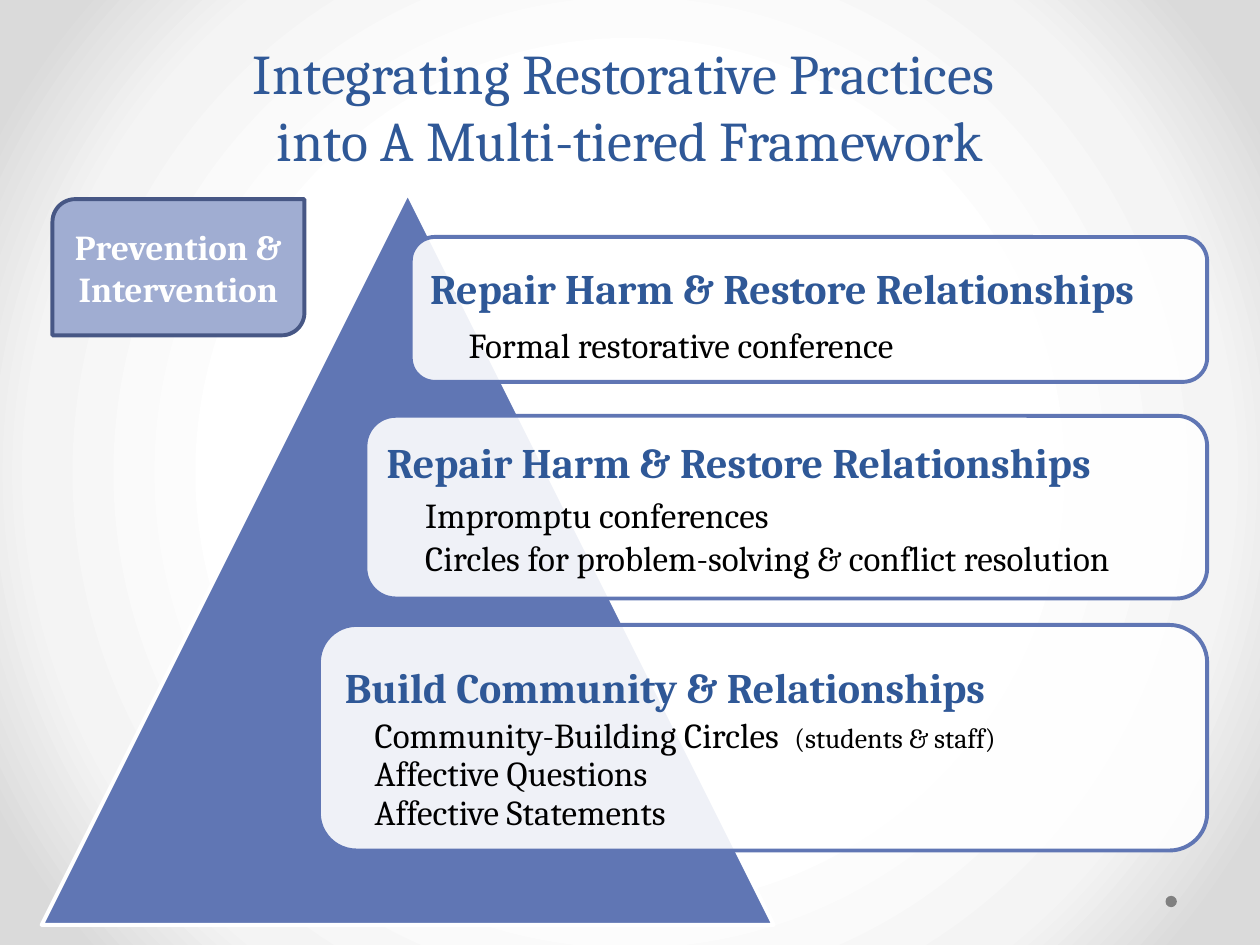
from dataclasses import dataclass

from lxml import etree
from pptx import Presentation
from pptx.dml.color import RGBColor
from pptx.enum.shapes import MSO_SHAPE
from pptx.enum.text import MSO_ANCHOR, MSO_AUTO_SIZE, PP_ALIGN
from pptx.oxml import parse_xml
from pptx.oxml.ns import nsdecls, qn
from pptx.util import Pt

TRIANGLE = MSO_SHAPE.ISOSCELES_TRIANGLE
ROUNDED = MSO_SHAPE.ROUNDED_RECTANGLE
DIAGONAL = MSO_SHAPE.ROUND_2_DIAG_RECTANGLE
OVAL = MSO_SHAPE.OVAL
TOP, MIDDLE, BOTTOM = MSO_ANCHOR.TOP, MSO_ANCHOR.MIDDLE, MSO_ANCHOR.BOTTOM
CENTER, LEFT = PP_ALIGN.CENTER, PP_ALIGN.LEFT
NO_FIT = MSO_AUTO_SIZE.NONE

FONT = "Cambria"
COLORS = {
    "heading": "2F5897",
    "pyramid": "6076B4",
    "badge": "A0ADD2",
    "badge_line": "475785",
    "white": "FFFFFF",
    "black": "000000",
    "dot": "808080",
}
BACKGROUND_STOPS = {50: "FFFFFF", 76: "F4F4F4", 92: "DADADA"}
TITLE_LINES = ["Integrating Restorative Practices ", "into A Multi-tiered Framework"]
TIER_RIGHT = 689.8
HEADING_LINE = 28
CORNER_INSET = 0.1667 * 0.293  # corner radius share, times the part the arc cuts off


@dataclass
class Span:
    text: str
    size: float = 20
    color: str = "black"
    bold: bool = False


@dataclass
class Tier:
    left: float
    top: float
    height: float
    heading: str
    items: list[list[Span]]
    side_inset: float
    top_inset: float
    indent: float
    item_line: float
    item_gap: float


TIERS = [
    Tier(234.7, 135.4, 82.8, "Repair Harm & Restore Relationships",
         [[Span("Formal restorative conference")]], 7.2, 11.5, 22, 24, 6),
    Tier(208.8, 237.6, 104.4, "Repair Harm & Restore Relationships",
         [[Span("Impromptu conferences")],
          [Span("Circles for problem-solving & conflict resolution")]],
         7.2, 7.4, 22, 24.5, 3.6),
    Tier(182.2, 357.1, 128.9, "Build Community & Relationships",
         [[Span("Community-Building Circles  "), Span("(students & staff)", 16)],
          [Span("Affective Questions")],
          [Span("Affective Statements")]], 8.6, 15.5, 17, 22, 2.7),
]


def rgb(name: str) -> RGBColor:
    return RGBColor.from_string(COLORS[name])


def set_all(target, **values) -> None:
    for name, value in values.items():
        setattr(target, name, value)


def add_spans(para, spans: list[Span]) -> None:
    for span in spans:
        run = para.add_run()
        run.text = span.text
        set_all(run.font, name=FONT, size=Pt(span.size), bold=span.bold)
        run.font.color.rgb = rgb(span.color)


def add_box(slide, kind, left: float, top: float, width: float, height: float,
            fill: str, line: str | None = None, opacity: int = 100):
    box = slide.shapes.add_shape(kind, Pt(left), Pt(top), Pt(width), Pt(height))
    box.shadow.inherit = False
    box.fill.solid()
    box.fill.fore_color.rgb = rgb(fill)
    if opacity < 100:
        color = box._element.spPr.find(qn("a:solidFill"))[0]
        etree.SubElement(color, qn("a:alpha"), val=str(opacity * 1000))
    if line:
        box.line.color.rgb = rgb(line)
        box.line.width = Pt(2.25)
    else:
        box.line.fill.background()
    return box


def set_background(slide) -> None:
    """Fill the page with a circular gradient that darkens outwards."""
    slide.background.fill.solid()
    solid = slide._element.find(".//" + qn("p:bgPr")).find(qn("a:solidFill"))
    stops = "".join(
        f'<a:gs pos="{position * 1000}"><a:srgbClr val="{color}"/></a:gs>'
        for position, color in BACKGROUND_STOPS.items())
    gradient = parse_xml(
        f'<a:gradFill {nsdecls("a")} rotWithShape="1"><a:gsLst>{stops}</a:gsLst>'
        '<a:path path="circle"><a:fillToRect l="50000" t="50000" r="50000" b="50000"/>'
        '</a:path></a:gradFill>')
    solid.getparent().replace(solid, gradient)


def add_title(slide) -> None:
    title = slide.shapes.title
    set_all(title, left=Pt(36), top=Pt(0), width=Pt(648), height=Pt(102.2))
    set_all(title.text_frame, vertical_anchor=BOTTOM, auto_size=NO_FIT, word_wrap=True)
    para = title.text_frame.paragraphs[0]
    para.alignment = CENTER
    for index, line in enumerate(TITLE_LINES):
        if index:
            para.add_line_break()
        add_spans(para, [Span(line, 32, "heading")])


def add_tier(slide, tier: Tier) -> None:
    width = TIER_RIGHT - tier.left
    add_box(slide, ROUNDED, tier.left, tier.top, width, tier.height,
            "white", "pyramid", opacity=90)
    inset = tier.height * CORNER_INSET
    text_box = slide.shapes.add_textbox(
        Pt(tier.left + inset), Pt(tier.top + inset),
        Pt(width - 2 * inset), Pt(tier.height - 2 * inset))
    frame = text_box.text_frame
    set_all(frame, word_wrap=True, auto_size=NO_FIT, vertical_anchor=TOP,
            margin_left=Pt(tier.side_inset), margin_right=Pt(tier.side_inset),
            margin_top=Pt(tier.top_inset), margin_bottom=Pt(0))
    heading = frame.paragraphs[0]
    set_all(heading, alignment=LEFT, line_spacing=Pt(HEADING_LINE),
            space_after=Pt(tier.item_gap))
    add_spans(heading, [Span(tier.heading, 24, "heading", True)])
    for spans in tier.items:
        para = frame.add_paragraph()
        set_all(para, alignment=LEFT, line_spacing=Pt(tier.item_line))
        para._p.get_or_add_pPr().set("marL", str(Pt(tier.indent)))
        add_spans(para, spans)


def add_badge(slide) -> None:
    badge = add_box(slide, DIAGONAL, 30, 113.8, 144, 77.8, "badge", "badge_line")
    set_all(badge.text_frame, word_wrap=True, vertical_anchor=MIDDLE)
    para = badge.text_frame.paragraphs[0]
    para.alignment = CENTER
    add_spans(para, [Span("Prevention & Intervention", 20, "white", True)])


def main() -> None:
    deck = Presentation()
    set_all(deck, slide_width=Pt(720), slide_height=Pt(540))
    slide = deck.slides.add_slide(deck.slide_layouts.get_by_name("Title Only"))
    set_background(slide)
    add_title(slide)
    add_box(slide, OVAL, 666, 511.9, 6.5, 6.5, "dot")
    add_box(slide, TRIANGLE, 23.8, 110.2, 418.3, 418.3, "pyramid", "white")
    for tier in TIERS:
        add_tier(slide, tier)
    add_badge(slide)
    deck.save("out.pptx")


if __name__ == "__main__":
    main()
